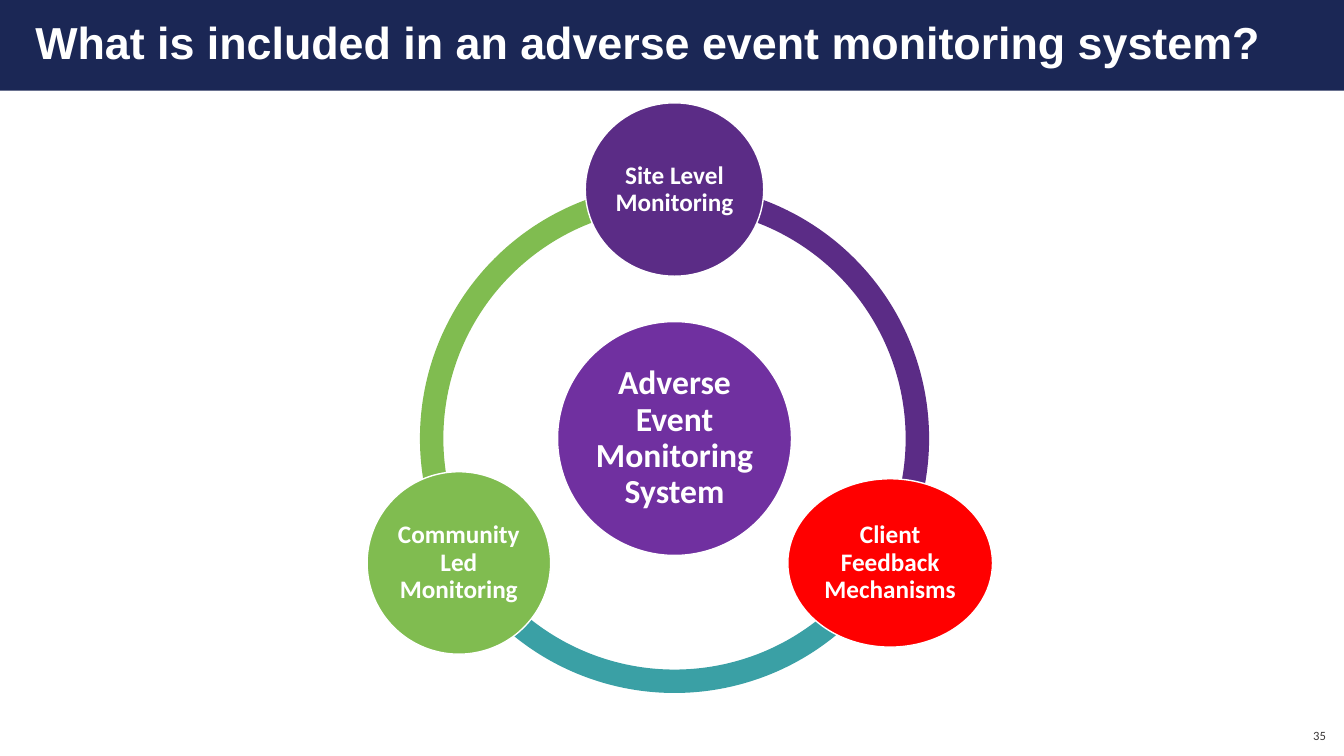
from math import cos, radians, sin

from pptx import Presentation
from pptx.dml.color import RGBColor
from pptx.enum.shapes import MSO_SHAPE
from pptx.enum.text import MSO_ANCHOR, PP_ALIGN
from pptx.util import Inches, Pt

RECTANGLE, OVAL, BLOCK_ARC = MSO_SHAPE.RECTANGLE, MSO_SHAPE.OVAL, MSO_SHAPE.BLOCK_ARC
MIDDLE = MSO_ANCHOR.MIDDLE
LEFT, CENTER, RIGHT = PP_ALIGN.LEFT, PP_ALIGN.CENTER, PP_ALIGN.RIGHT

WHITE, NAVY, GREY = "FFFFFF", "1B2755", "3B3838"
GREEN, TEAL, PURPLE, VIOLET, RED = "80BC50", "3AA0A5", "5B2C86", "7030A0", "FF0000"

CENTER_X, CENTER_Y = 6.69, 4.35
RING_SIZE = 5.05
ORBIT = 2.47  # distance from the hub to each outer circle

presentation = Presentation()
presentation.slide_width = Inches(13.33)
presentation.slide_height = Inches(7.5)
slide = presentation.slides.add_slide(presentation.slide_layouts[6])


def add_filled(kind, left, top, width, height, color):
    shape = slide.shapes.add_shape(
        kind, Inches(left), Inches(top), Inches(width), Inches(height))
    shape.shadow.inherit = False
    shape.fill.solid()
    shape.fill.fore_color.rgb = RGBColor.from_string(color)
    shape.line.fill.background()
    return shape


def write(shape, text, size, font, color, align, bold, margin):
    frame = shape.text_frame
    frame.word_wrap = True
    frame.margin_left = frame.margin_right = Inches(margin)
    frame.margin_top = frame.margin_bottom = Inches(margin)
    paragraph = frame.paragraphs[0]
    paragraph.alignment = align
    run = paragraph.add_run()
    run.text = text
    run.font.size = Pt(size)
    run.font.name = font
    run.font.bold = bold
    run.font.color.rgb = RGBColor.from_string(color)


# Header and page number
add_filled(RECTANGLE, 0, 0, 13.33, 0.9, NAVY)
title = slide.shapes.add_textbox(Inches(0.35), Inches(0.15), Inches(12.79), Inches(0.54))
write(title, "What is included in an adverse event monitoring system?",
      32, "Arial", WHITE, LEFT, True, 0)
page_number = slide.shapes.add_textbox(Inches(12.61), Inches(7.1), Inches(0.64), Inches(0.4))
page_number.text_frame.vertical_anchor = MIDDLE
write(page_number, "35", 9, "Calibri", GREY, RIGHT, False, 0.1)

# Ring: three arcs, angles in degrees clockwise from the right
for start, end, color in [(150, 270, GREEN), (30, 150, TEAL), (270, 30, PURPLE)]:
    arc = add_filled(BLOCK_ARC, CENTER_X - RING_SIZE / 2, CENTER_Y - RING_SIZE / 2,
                     RING_SIZE, RING_SIZE, color)
    # Stored angles are 60000ths of a degree; adjustments are in units of 100000
    arc.adjustments[0] = start * 0.6
    arc.adjustments[1] = end * 0.6
    arc.adjustments[2] = 0.046

# Hub, then the three components around it
circles = [
    ("Adverse Event Monitoring System", 0, 0, 2.32, 2.32, VIOLET, 24),
    ("Site Level Monitoring", ORBIT, 270, 1.77, 1.72, PURPLE, 18),
    ("Client Feedback Mechanisms", ORBIT, 30, 2.03, 1.67, RED, 18),
    ("Community Led Monitoring", ORBIT, 150, 1.82, 1.81, GREEN, 18),
]
for label, distance, angle, width, height, color, size in circles:
    x = CENTER_X + distance * cos(radians(angle))
    y = CENTER_Y + distance * sin(radians(angle))
    circle = add_filled(OVAL, x - width / 2, y - height / 2, width, height, color)
    circle.line.color.rgb = RGBColor.from_string(WHITE)
    circle.line.width = Pt(1)
    circle.text_frame.vertical_anchor = MIDDLE
    write(circle, label, size, "Calibri", WHITE, CENTER, True, 0.03)
    circle.text_frame.paragraphs[0].line_spacing = 0.9

presentation.save("out.pptx")
